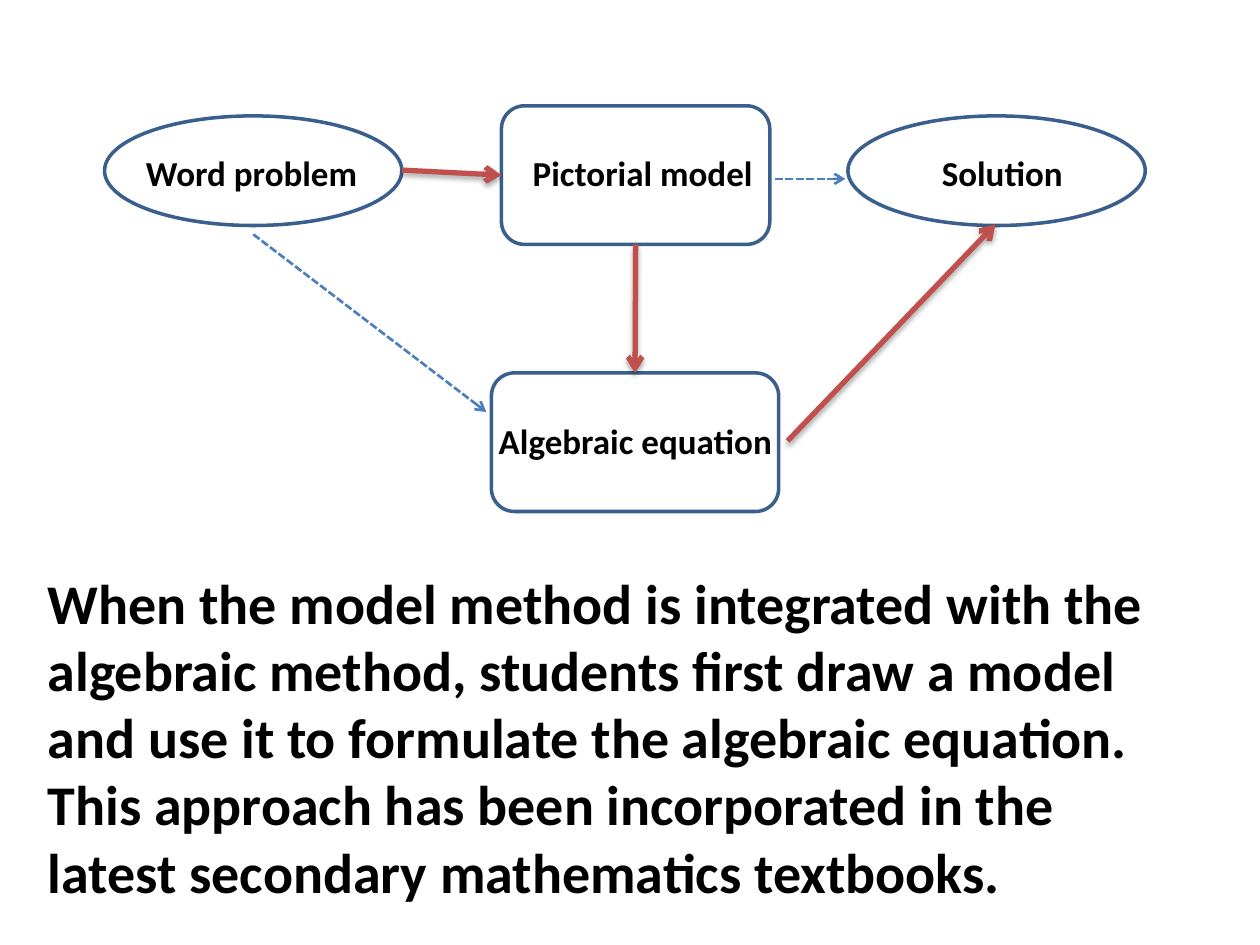
from dataclasses import dataclass

import lxml.etree
import pptx
import pptx.dml.color
import pptx.enum.dml
import pptx.enum.shapes
import pptx.enum.text
import pptx.oxml
import pptx.oxml.ns
import pptx.util

SLIDE_WIDTH = pptx.util.Inches(10)
SLIDE_HEIGHT = pptx.util.Inches(7.5)
COLUMNS, ROWS = 100, 75
COLORS = {"outline": "3A5F8C", "main": "C0504D", "optional": "4B7EBC", "text": "000000"}
FONT = "Calibri"
ROUNDED = pptx.enum.shapes.MSO_SHAPE.ROUNDED_RECTANGLE
OVAL = pptx.enum.shapes.MSO_SHAPE.OVAL
LEFT = pptx.enum.text.PP_ALIGN.LEFT
CENTER = pptx.enum.text.PP_ALIGN.CENTER
TOP_SITE, LEFT_SITE, BOTTOM_SITE = 0, 1, 2

SHADOW = (
    '<a:outerShdw blurRad="39370" dist="22860" dir="5400000" rotWithShape="0">'
    '<a:srgbClr val="000000"><a:alpha val="35000"/></a:srgbClr></a:outerShdw>'
)


@dataclass(frozen=True)
class Box:
    """A rectangle in grid columns and rows."""
    column: float
    row: float
    width: float
    height: float


@dataclass(frozen=True)
class Node:
    name: str
    kind: pptx.enum.shapes.MSO_SHAPE
    box: Box


@dataclass(frozen=True)
class Label:
    text: str
    box: Box
    size: int = 20
    align: pptx.enum.text.PP_ALIGN = LEFT


@dataclass(frozen=True)
class Arrow:
    start: tuple[float, float]
    end: tuple[float, float]
    main: bool
    start_joint: tuple[str, int] | None = None
    end_joint: tuple[str, int] | None = None


NODES = [
    Node("pictorial", ROUNDED, Box(39.8, 8.4, 21.3, 11)),
    Node("algebraic", ROUNDED, Box(39, 29.6, 22.8, 11)),
    Node("problem", OVAL, Box(8.3, 9.2, 23.6, 8.7)),
    Node("solution", OVAL, Box(67.3, 9.2, 23.6, 8.7)),
]
LABELS = [
    Label("Word problem", Box(10.6, 11.5, 19.7, 4.4)),
    Label("Solution", Box(69.7, 11.5, 19.7, 4.4), align=CENTER),
    Label("Pictorial model", Box(41.3, 11.5, 19.7, 4.4)),
    Label("Algebraic equation", Box(38.6, 32.8, 24.5, 4.4)),
    Label(
        "When the model method is integrated with the algebraic method, "
        "students first draw a model and use it to formulate the algebraic "
        "equation. This approach has been incorporated in the latest "
        "secondary mathematics textbooks.",
        Box(2.8, 44.6, 89.8, 27.9), size=32,
    ),
]
ARROWS = [
    Arrow((31.9, 13.5), (39.8, 13.5), True, end_joint=("pictorial", LEFT_SITE)),
    Arrow((62.5, 35), (79, 17.8), True),
    Arrow((61.5, 14.2), (67.1, 14.2), False),
    Arrow((20.1, 18.6), (38.6, 32.7), False),
    Arrow((50.4, 19.4), (50.4, 29.6), True,
          ("pictorial", BOTTOM_SITE), ("algebraic", TOP_SITE)),
]


def x(columns: float) -> int:
    return round(SLIDE_WIDTH * columns / COLUMNS)


def y(rows: float) -> int:
    return round(SLIDE_HEIGHT * rows / ROWS)


def place(box: Box) -> tuple[int, int, int, int]:
    return x(box.column), y(box.row), x(box.width), y(box.height)


def color(name: str) -> pptx.dml.color.RGBColor:
    return pptx.dml.color.RGBColor.from_string(COLORS[name])


def draw_node(slide, node: Node):
    shape = slide.shapes.add_shape(node.kind, *place(node.box))
    shape.shadow.inherit = False
    shape.fill.background()
    shape.line.color.rgb = color("outline")
    shape.line.width = pptx.util.Pt(2)
    return shape


def draw_label(slide, label: Label) -> None:
    frame = slide.shapes.add_textbox(*place(label.box)).text_frame
    frame.word_wrap = True
    frame.auto_size = pptx.enum.text.MSO_AUTO_SIZE.SHAPE_TO_FIT_TEXT
    paragraph = frame.paragraphs[0]
    paragraph.alignment = label.align
    run = paragraph.add_run()
    run.text = label.text
    run.font.name = FONT
    run.font.size = pptx.util.Pt(label.size)
    run.font.bold = True
    run.font.color.rgb = color("text")


def draw_arrow(slide, arrow: Arrow, shapes: dict) -> None:
    """Main steps are solid with a shadow, optional ones thin and dashed."""
    connector = slide.shapes.add_connector(
        pptx.enum.shapes.MSO_CONNECTOR.STRAIGHT,
        x(arrow.start[0]), y(arrow.start[1]), x(arrow.end[0]), y(arrow.end[1]),
    )
    if arrow.start_joint:
        name, site = arrow.start_joint
        connector.begin_connect(shapes[name], site)
    if arrow.end_joint:
        name, site = arrow.end_joint
        connector.end_connect(shapes[name], site)
    line = connector.line
    line.color.rgb = color("main" if arrow.main else "optional")
    line.width = pptx.util.Pt(3 if arrow.main else 1.5)
    if not arrow.main:
        line.dash_style = pptx.enum.dml.MSO_LINE.SQUARE_DOT
    properties = connector._element.spPr
    outline = properties.find(pptx.oxml.ns.qn("a:ln"))
    lxml.etree.SubElement(outline, pptx.oxml.ns.qn("a:tailEnd"), type="arrow")
    properties.append(pptx.oxml.parse_xml(
        f'<a:effectLst {pptx.oxml.ns.nsdecls("a")}>'
        f'{SHADOW if arrow.main else ""}</a:effectLst>'
    ))


def main() -> None:
    presentation = pptx.Presentation()
    presentation.slide_width = SLIDE_WIDTH
    presentation.slide_height = SLIDE_HEIGHT
    slide = presentation.slides.add_slide(presentation.slide_layouts[6])
    shapes = {node.name: draw_node(slide, node) for node in NODES}
    for label in LABELS:
        draw_label(slide, label)
    for arrow in ARROWS:
        draw_arrow(slide, arrow, shapes)
    presentation.save("out.pptx")


if __name__ == "__main__":
    main()
